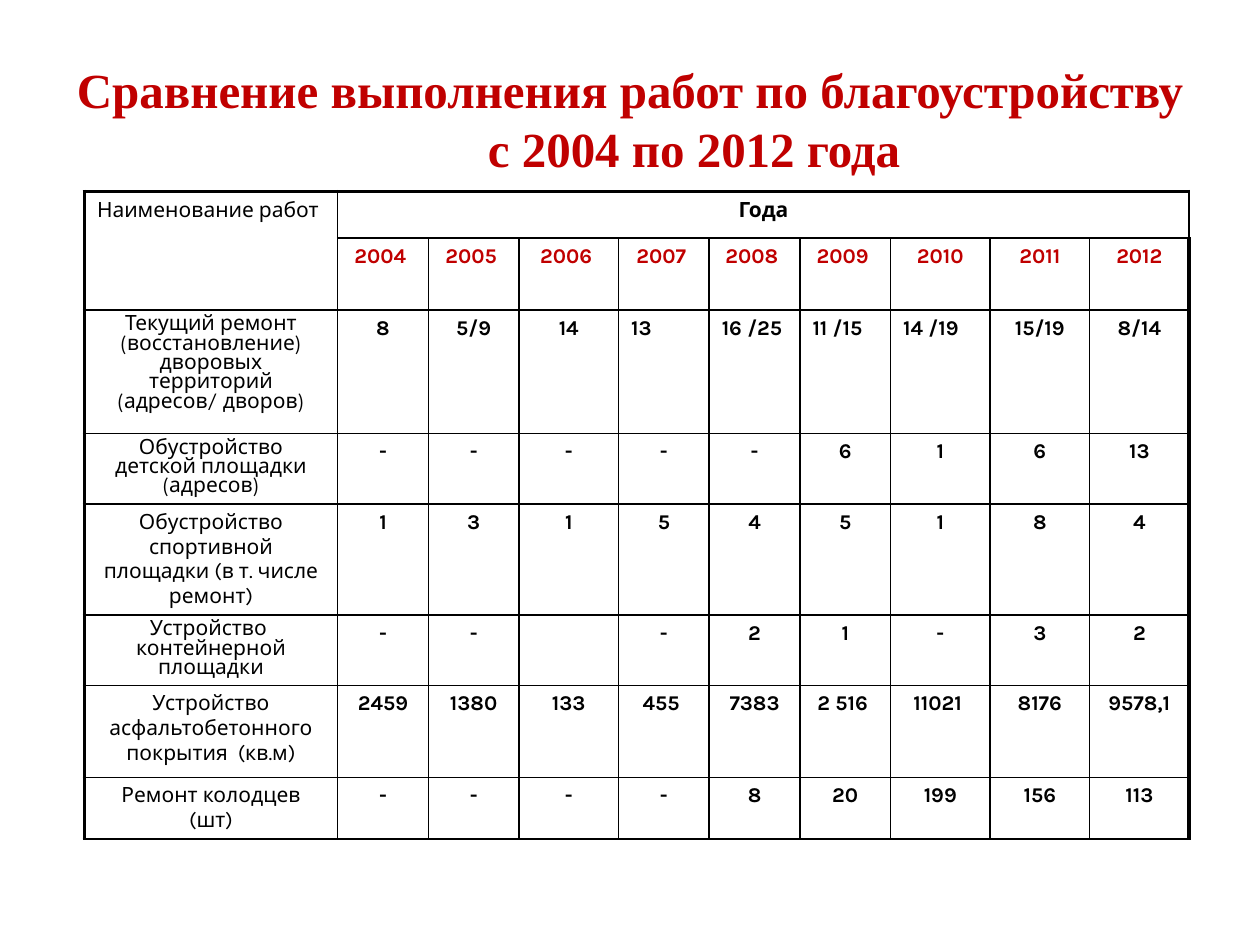
from pptx import Presentation, util as u
from pptx.dml.color import RGBColor
from pptx.enum import text
from pptx.oxml.ns import qn
from lxml import etree

RED, BLACK = "C00000", "000000"
LEFT, CENTER = text.PP_ALIGN.LEFT, text.PP_ALIGN.CENTER
THICK, THIN = 2.25, 1

COLUMN_WIDTHS = [2.01, 0.72, 0.72, 0.79, 0.72, 0.72, 0.72, 0.79, 0.79, 0.79]
ROW_HEIGHTS = [0.37, 0.57, 0.98, 0.52, 0.73, 0.52, 0.73, 0.31]
ROWS = [
    ["Наименование работ", "Года"] + [""] * 8,
    ["", "2004 ", "2005 ", "2006 ", "2007 ", "2008 ", "2009 ", "2010", "2011", "2012"],
    ["Текущий ремонт (восстановление) дворовых территорий (адресов/ дворов)",
     "8", "5/9", "14", "13", "16 /25", "11 /15", "14 /19", "15/19", "8/14"],
    ["Обустройство детской площадки (адресов)",
     "-", "-", "-", "-", "-", "6", "1", "6", "13"],
    ["Обустройство спортивной площадки (в т. числе ремонт)",
     "1", "3", "1", "5", "4", "5", "1", "8", "4"],
    ["Устройство  контейнерной площадки",
     "-", "-", "", "-", "2", "1", "-", "3", "2"],
    ["Устройство асфальтобетонного покрытия  (кв.м)",
     "2459", "1380", "133", "455 ", "7383", "2 516 ", "11021 ", "8176", "9578,1"],
    ["Ремонт колодцев (шт)",
     "-", "-", "-", "-", "8", "20", "199", "156", "113"],
]
YEARS_ROW = 1
SPARTAN_ROWS = {2, 3, 5}  # work names set in League Spartan
LEFT_CELLS = {(0, 0), (2, 4), (2, 5), (2, 6), (2, 7)}


def color(value):
    return RGBColor.from_string(value)


class SlideBuilder:
    """Holds the text style and the current slide."""
    title_font, table_font, name_font = "Times New Roman", "Karla", "League Spartan"
    title_size, table_size = 28, 12

    def __init__(self, slide):
        self.slide = slide

    def style(self, paragraph, font, size, fill, bold, align):
        paragraph.alignment = align
        paragraph.font.name = font
        paragraph.font.size = u.Pt(size)
        paragraph.font.bold = bold
        paragraph.font.color.rgb = color(fill)

    def title(self, words, left, top, width, height, hanging):
        shape = self.slide.shapes.title
        shape.left, shape.top = u.Inches(left), u.Inches(top)
        shape.width, shape.height = u.Inches(width), u.Inches(height)
        frame = shape.text_frame
        frame.word_wrap = True
        frame.auto_size = text.MSO_AUTO_SIZE.NONE
        frame.vertical_anchor = text.MSO_ANCHOR.TOP
        paragraph = frame.paragraphs[0]
        paragraph.text = words
        self.style(paragraph, self.title_font, self.title_size, RED, True, CENTER)
        properties = paragraph._p.get_or_add_pPr()
        properties.set("marL", str(u.Inches(hanging)))
        properties.set("indent", str(-u.Inches(hanging)))

    def border(self, cell, side, width):
        line = etree.SubElement(cell._tc.get_or_add_tcPr(), qn(f"a:ln{side}"),
                                w=str(u.Pt(width)))
        fill = etree.SubElement(line, qn("a:solidFill"))
        etree.SubElement(fill, qn("a:srgbClr"), val=BLACK)

    def cell(self, cell, words, row, column, last_column):
        # Heavy frame on the left, top and right; thin lines elsewhere
        self.border(cell, "L", THICK if column == 0 else THIN)
        self.border(cell, "R", THICK if column == last_column else THIN)
        self.border(cell, "T", THICK if row == 0 else THIN)
        self.border(cell, "B", THIN)
        cell.fill.background()
        paragraph = cell.text_frame.paragraphs[0]
        paragraph.text = words
        paragraph.space_before = u.Pt(0.2 * self.table_size)
        is_name = column == 0
        self.style(
            paragraph,
            self.name_font if is_name and row in SPARTAN_ROWS else self.table_font,
            self.table_size,
            RED if row == YEARS_ROW else BLACK,
            not is_name,
            LEFT if (row, column) in LEFT_CELLS else CENTER)

    def table(self, rows, left, top, widths, heights):
        table = self.slide.shapes.add_table(
            len(rows), len(widths), u.Inches(left), u.Inches(top),
            u.Inches(sum(widths)), u.Inches(sum(heights))).table
        table.first_row = table.horz_banding = False
        for column, width in zip(table.columns, widths):
            column.width = u.Inches(width)
        for row, height in zip(table.rows, heights):
            row.height = u.Inches(height)
        for i, row in enumerate(rows):
            for j, words in enumerate(row):
                self.cell(table.cell(i, j), words, i, j, len(widths) - 1)
        return table


def main():
    presentation = Presentation()
    presentation.slide_width, presentation.slide_height = u.Inches(10), u.Inches(7.5)
    builder = SlideBuilder(presentation.slides.add_slide(presentation.slide_layouts[5]))

    # Title
    builder.title("Сравнение выполнения работ по благоустройству\v с 2004 по 2012 года",
                  0.5, 0.42, 9, 1.15, hanging=0.92)

    # Works by year, with a two-row header
    table = builder.table(ROWS, 0.67, 1.52, COLUMN_WIDTHS, ROW_HEIGHTS)
    table.cell(0, 0).merge(table.cell(1, 0))
    table.cell(0, 1).merge(table.cell(0, len(COLUMN_WIDTHS) - 1))

    presentation.save("out.pptx")


if __name__ == "__main__":
    main()
